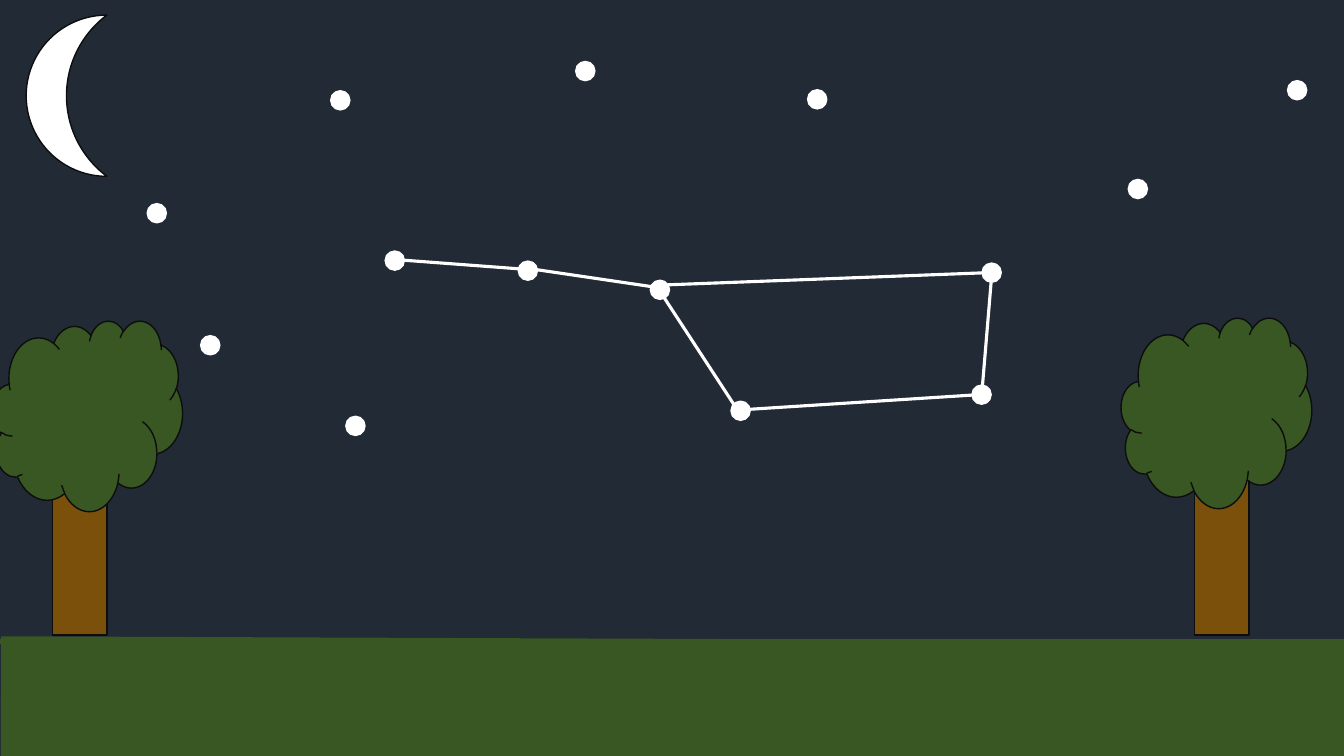
from pptx import Presentation
from pptx.dml.color import RGBColor
from pptx.enum import shapes
from pptx.oxml.ns import qn
from pptx.util import Inches, Pt
from lxml import etree

NIGHT, WHITE, GRASS, BARK, OUTLINE = "222A35", "FFFFFF", "385723", "7B500B", "0D0D0D"
STAR_SIZE = 0.19

DIPPER_STARS = [(3.82, 2.49), (5.14, 2.59), (6.45, 2.78), (7.25, 3.98),
                (9.64, 3.82), (9.74, 2.61)]
OTHER_STARS = [(1.99, 3.33), (12.77, 0.8), (8.01, 0.89), (3.28, 0.9),
               (1.46, 2.02), (3.43, 4.13), (5.71, 0.61), (11.19, 1.78)]
DIPPER_LINES = [
    ((3.85, 2.57), (5.32, 2.68)),
    ((5.15, 2.65), (6.64, 2.87)),
    ((6.52, 2.85), (7.29, 4.03)),
    ((7.29, 4.07), (9.64, 3.92)),
    ((9.74, 3.88), (9.83, 2.8)),
    ((6.51, 2.83), (9.93, 2.7)),
]


def color(hex_string):
    return RGBColor.from_string(hex_string)


def add_figure(slide, preset, left, top, width, height, fill, line=OUTLINE):
    shape = slide.shapes.add_shape(
        preset, Inches(left), Inches(top), Inches(width), Inches(height))
    shape.shadow.inherit = False
    shape.fill.solid()
    shape.fill.fore_color.rgb = color(fill)
    shape.line.color.rgb = color(line)
    shape.line.width = Pt(1)


def add_line(slide, start, end, line, width):
    connector = slide.shapes.add_connector(
        shapes.MSO_CONNECTOR.STRAIGHT, *(Inches(value) for value in (*start, *end)))
    connector.line.color.rgb = color(line)
    connector.line.width = Pt(width)
    etree.SubElement(connector._element.spPr, qn("a:effectLst"))


def add_star(slide, left, top):
    add_figure(slide, shapes.MSO_SHAPE.OVAL, left, top, STAR_SIZE, STAR_SIZE, WHITE, WHITE)


def add_ground(slide):
    add_line(slide, (0, 6.36), (13.33, 6.36), GRASS, 3.5)
    add_line(slide, (0.01, 6.91), (13.39, 6.96), GRASS, 86)


def add_tree(slide, trunk_left, crown_left, crown_top):
    add_figure(slide, shapes.MSO_SHAPE.RECTANGLE, trunk_left, 4.46, 0.54, 1.84, BARK)
    add_figure(slide, shapes.MSO_SHAPE.CLOUD, crown_left, crown_top, 1.89, 1.89, GRASS)


def main():
    presentation = Presentation()
    presentation.slide_width = Inches(13.33)
    presentation.slide_height = Inches(7.5)
    slide = presentation.slides.add_slide(presentation.slide_layouts[6])
    slide.background.fill.solid()
    slide.background.fill.fore_color.rgb = color(NIGHT)

    for left, top in DIPPER_STARS + OTHER_STARS:
        add_star(slide, left, top)
    add_ground(slide)
    add_tree(slide, 0.52, -0.08, 3.18)
    add_figure(slide, shapes.MSO_SHAPE.MOON, 0.26, 0.15, 0.8, 1.6, WHITE)
    add_tree(slide, 11.85, 11.12, 3.15)
    for start, end in DIPPER_LINES:
        add_line(slide, start, end, WHITE, 2.25)

    presentation.save("out.pptx")


if __name__ == "__main__":
    main()
